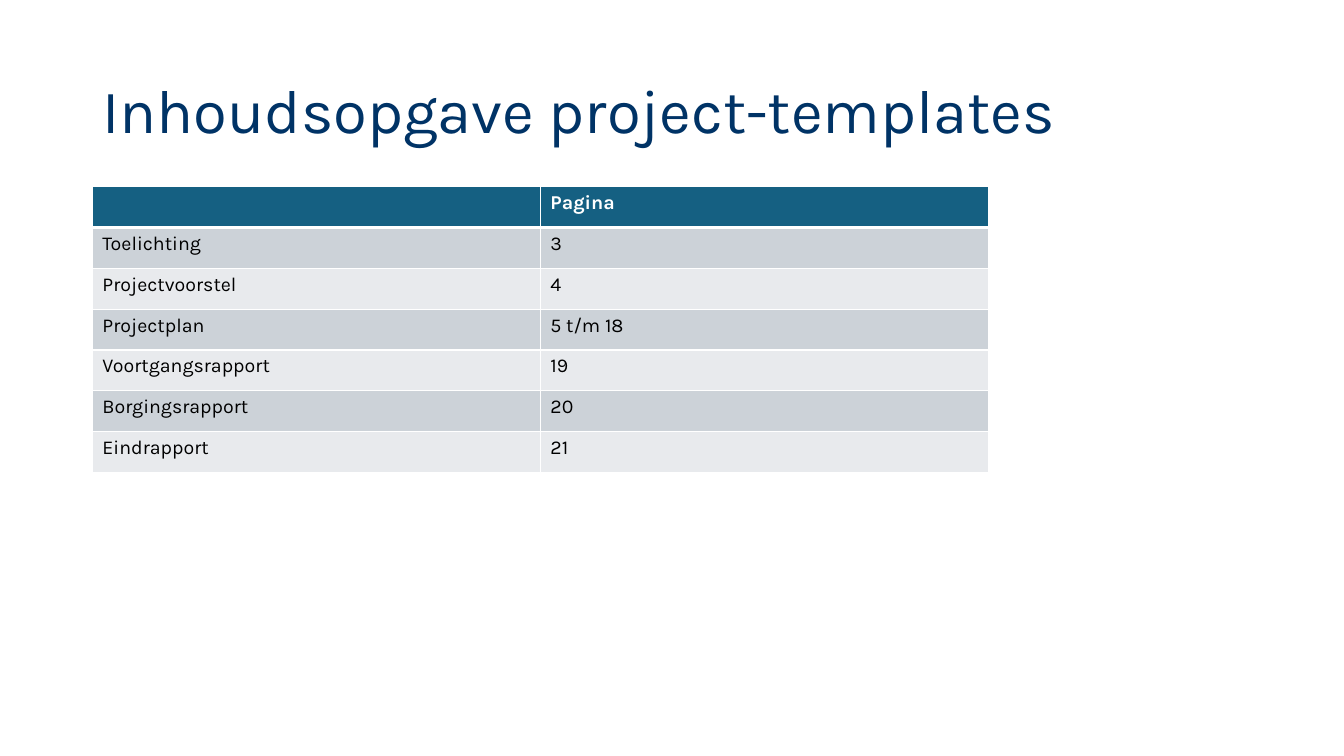
from lxml.etree import SubElement
from pptx import Presentation
from pptx.dml.color import RGBColor
from pptx.enum.text import MSO_ANCHOR
from pptx.oxml.ns import qn
from pptx.util import Pt

NAVY = RGBColor(0x00, 0x33, 0x66)
TEAL = RGBColor(0x15, 0x60, 0x82)
GREY = RGBColor(0xCC, 0xD2, 0xD8)
PALE = RGBColor(0xE8, 0xEA, 0xED)
WHITE = RGBColor(0xFF, 0xFF, 0xFF)
BLACK = RGBColor(0x00, 0x00, 0x00)

ROWS = [
    ("", "Pagina"),
    ("Toelichting", "3"),
    ("Projectvoorstel", "4"),
    ("Projectplan", "5 t/m 18"),
    ("Voortgangsrapport", "19"),
    ("Borgingsrapport", "20"),
    ("Eindrapport", "21"),
]


def write(frame, text, size=14, color=BLACK, bold=False, spacing=1.0):
    para = frame.paragraphs[0]
    para.text = text
    para.line_spacing = spacing
    para.font.name = "Karla"
    para.font.size = Pt(size)
    para.font.bold = bold
    para.font.color.rgb = color


def edge(cell, side, width):
    """Draw a white border on one side of a cell."""
    line = SubElement(cell._tc.get_or_add_tcPr(), qn("a:ln" + side), w=str(Pt(width)))
    fill = SubElement(line, qn("a:solidFill"))
    SubElement(fill, qn("a:srgbClr"), val=str(WHITE))


deck = Presentation()
deck.slide_width = Pt(960)
deck.slide_height = Pt(540)
slide = deck.slides.add_slide(deck.slide_layouts[6])

title = slide.shapes.add_textbox(Pt(66), Pt(28.75), Pt(828), Pt(104.4)).text_frame
title.word_wrap = True
title.vertical_anchor = MSO_ANCHOR.MIDDLE
write(title, "Inhoudsopgave project-templates", size=44, color=NAVY, spacing=0.9)

table = slide.shapes.add_table(
    len(ROWS), 2, Pt(66), Pt(133.2), Pt(640), Pt(29.2 * len(ROWS))
).table
for i, row in enumerate(ROWS):
    table.rows[i].height = Pt(29.2)
    head = i == 0
    for j, text in enumerate(row):
        cell = table.cell(i, j)
        for side in "LRTB":
            thick = (head and side == "B") or (i == 1 and side == "T")
            edge(cell, side, 3 if thick else 1)
        cell.fill.solid()
        cell.fill.fore_color.rgb = TEAL if head else GREY if i % 2 else PALE
        write(cell.text_frame, text, color=WHITE if head else BLACK, bold=head)

deck.save("out.pptx")
